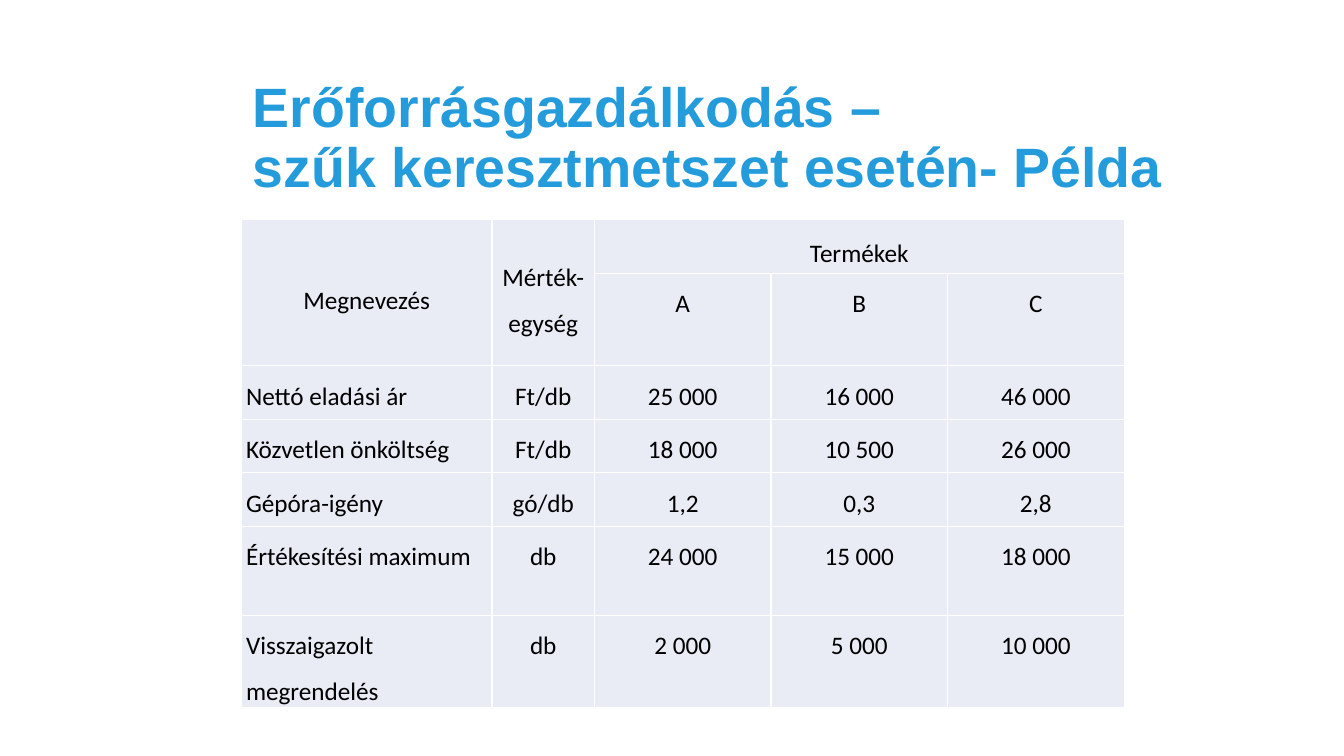
"""Build the resource management example slide with its product table."""
from dataclasses import dataclass

from lxml import etree
from pptx import Presentation
from pptx.dml.color import RGBColor
from pptx.enum.text import MSO_ANCHOR, MSO_AUTO_SIZE, PP_ALIGN
from pptx.oxml.ns import qn
from pptx.util import Cm, Pt

LEFT, CENTER = PP_ALIGN.LEFT, PP_ALIGN.CENTER
TOP, MIDDLE = MSO_ANCHOR.TOP, MSO_ANCHOR.MIDDLE
NO_AUTOFIT = MSO_AUTO_SIZE.NONE

TITLE = "Erőforrásgazdálkodás –\vszűk keresztmetszet esetén- Példa"
TITLE_BOX = {"left": Cm(6.12), "top": Cm(2.13), "width": Cm(25.4), "height": Cm(2.79)}
TITLE_FRAME = {"word_wrap": True, "auto_size": NO_AUTOFIT, "vertical_anchor": MIDDLE}
TITLE_FONT = {"name": "Arial", "size": Pt(39.6), "bold": True}
CELL_FONT = {"name": "Calibri", "size": Pt(18), "bold": False}
CELL_MARGINS = {"margin_left": Cm(0.12), "margin_right": Cm(0.12),
                "margin_top": 0, "margin_bottom": 0}

TITLE_COLOUR = "249CDC"
TEXT_COLOUR = "000000"
CELL_COLOUR = "E9EBF5"
BORDER_COLOUR = "FFFFFF"

TABLE_LEFT, TABLE_TOP = 6.08, 5.54
COLUMN_WIDTHS = (6.32, 2.58) + (4.45,) * 3
ROW_HEIGHTS = (1.35, 2.32, 1.35, 1.35, 1.35, 2.24, 2.32)
HEADER_ROWS = 2


@dataclass(frozen=True)
class HeaderCell:
    """A header cell with its position, span and anchor."""
    text: str
    row: int
    column: int
    row_span: int = 1
    column_span: int = 1
    anchor: MSO_ANCHOR = MIDDLE


@dataclass(frozen=True)
class ProductRow:
    """A labelled measure with one value per product."""
    label: str
    unit: str
    values: tuple[str, ...]


HEADERS = (
    HeaderCell("Megnevezés", 0, 0, row_span=2),
    HeaderCell("Mérték-egység", 0, 1, row_span=2),
    HeaderCell("Termékek", 0, 2, column_span=3),
    *(HeaderCell(product, 1, column, anchor=TOP)
      for column, product in enumerate("ABC", start=2)),
)
PRODUCT_ROWS = (
    ProductRow("Nettó eladási ár", "Ft/db", ("25 000", "16 000", "46 000")),
    ProductRow("Közvetlen önköltség", "Ft/db", ("18 000", "10 500", "26 000")),
    ProductRow("Gépóra-igény", "gó/db", ("1,2", "0,3", "2,8")),
    ProductRow("Értékesítési maximum", "db", ("24 000", "15 000", "18 000")),
    ProductRow("Visszaigazolt megrendelés", "db", ("2 000", "5 000", "10 000")),
)


def colour(value: str) -> RGBColor:
    """Turn a hex string into a colour."""
    return RGBColor.from_string(value)


def apply_format(target: object, values: dict) -> None:
    """Set each named attribute on the target."""
    for name, value in values.items():
        setattr(target, name, value)


def format_paragraph(paragraph, alignment, spacing: float, font: dict, hex_colour: str) -> None:
    """Format a paragraph and every run in it."""
    apply_format(paragraph, {"alignment": alignment, "line_spacing": spacing})
    for run in paragraph.runs:
        apply_format(run.font, font)
        run.font.color.rgb = colour(hex_colour)


def style_cell(cell) -> None:
    """Give a cell its borders, fill and margins."""
    properties = cell._tc.get_or_add_tcPr()
    for side in ("a:lnL", "a:lnR", "a:lnT", "a:lnB"):
        line = etree.SubElement(properties, qn(side), w=str(Pt(1)))
        fill = etree.SubElement(line, qn("a:solidFill"))
        etree.SubElement(fill, qn("a:srgbClr"), val=BORDER_COLOUR)
    cell.fill.solid()
    cell.fill.fore_color.rgb = colour(CELL_COLOUR)
    apply_format(cell, CELL_MARGINS)


def write_cell(cell, text: str, alignment, anchor) -> None:
    """Write formatted text into a cell."""
    cell.text = text
    cell.vertical_anchor = anchor
    format_paragraph(cell.text_frame.paragraphs[0], alignment, 1.5, CELL_FONT, TEXT_COLOUR)


def add_title(slide) -> None:
    """Fill and place the title placeholder."""
    title = slide.shapes.title
    apply_format(title, TITLE_BOX)
    apply_format(title.text_frame, TITLE_FRAME)
    title.text_frame.text = TITLE
    format_paragraph(title.text_frame.paragraphs[0], LEFT, 0.9, TITLE_FONT, TITLE_COLOUR)


def add_product_table(slide) -> None:
    """Add the table with its headers and product rows."""
    table = slide.shapes.add_table(
        len(ROW_HEIGHTS), len(COLUMN_WIDTHS), Cm(TABLE_LEFT), Cm(TABLE_TOP),
        Cm(sum(COLUMN_WIDTHS)), Cm(sum(ROW_HEIGHTS))).table
    apply_format(table, {"first_row": False, "horz_banding": False})
    for column, width in zip(table.columns, COLUMN_WIDTHS):
        column.width = Cm(width)
    for row, height in zip(table.rows, ROW_HEIGHTS):
        row.height = Cm(height)
    for cell in table.iter_cells():
        style_cell(cell)
    for header in HEADERS:
        cell = table.cell(header.row, header.column)
        if header.row_span > 1 or header.column_span > 1:
            cell.merge(table.cell(header.row + header.row_span - 1,
                                  header.column + header.column_span - 1))
        write_cell(cell, header.text, CENTER, header.anchor)
    for row_index, product_row in enumerate(PRODUCT_ROWS, start=HEADER_ROWS):
        texts = (product_row.label, product_row.unit, *product_row.values)
        for column_index, text in enumerate(texts):
            alignment = CENTER if column_index else LEFT
            write_cell(table.cell(row_index, column_index), text, alignment, TOP)


def main() -> None:
    """Create and save the presentation."""
    presentation = Presentation()
    apply_format(presentation, {"slide_width": Cm(33.87), "slide_height": Cm(19.05)})
    slide = presentation.slides.add_slide(presentation.slide_layouts.get_by_name("Title Only"))
    add_title(slide)
    add_product_table(slide)
    presentation.save("out.pptx")


if __name__ == "__main__":
    main()
